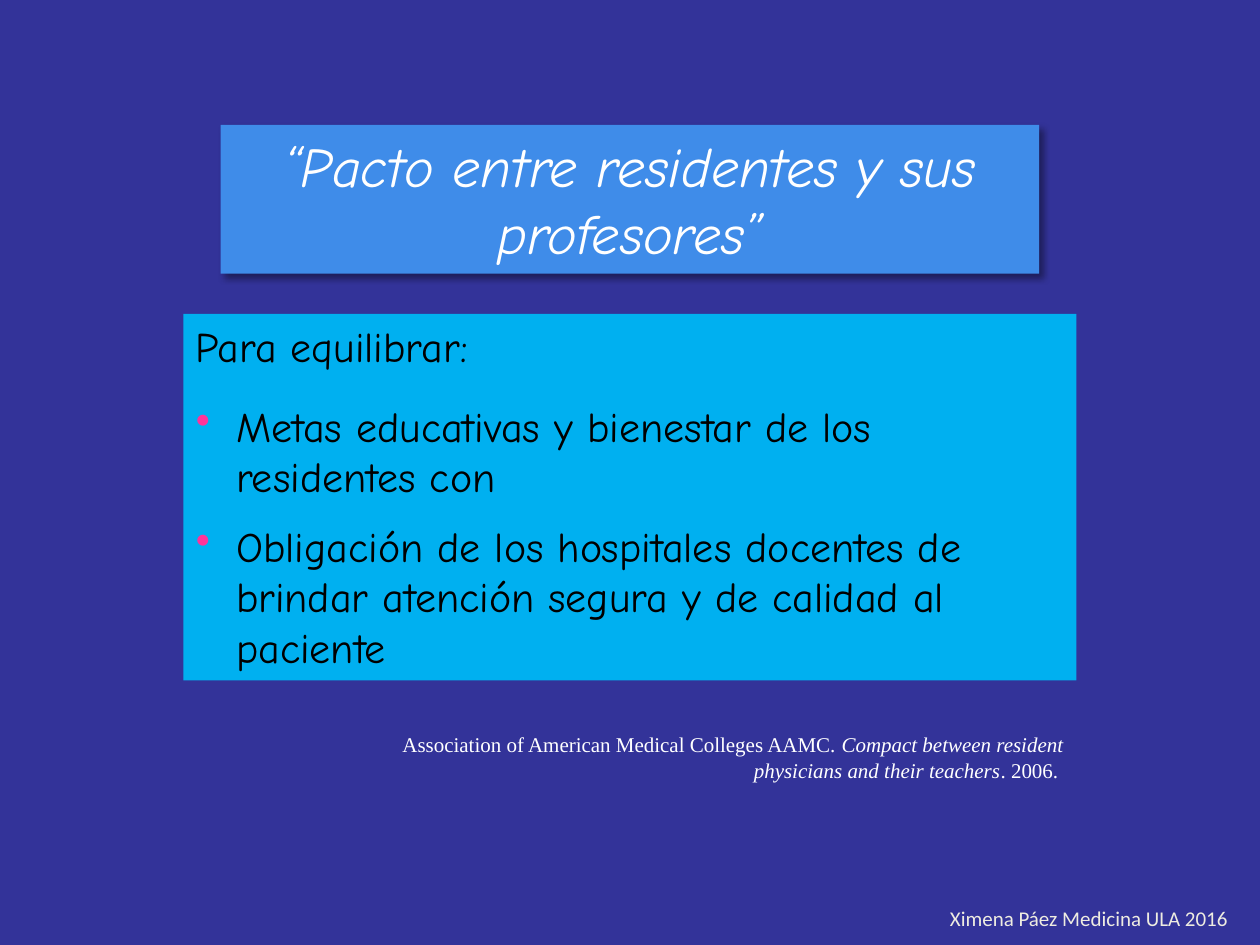
import pptx
import pptx.util
import pptx.dml.color
import pptx.enum.shapes
import pptx.enum.text
import pptx.oxml
import pptx.oxml.ns
from lxml import etree

Cm = pptx.util.Cm
Pt = pptx.util.Pt
Align = pptx.enum.text.PP_ALIGN

TITLE = "“Pacto entre residentes y sus profesores”"
INTRO = "Para equilibrar:"
GOALS = [
    ("Metas educativas y bienestar de los residentes con", 17),
    ("Obligación de los hospitales docentes de brindar atención segura y de calidad al paciente", 11),
]
CITATION = [
    ("Association of American Medical Colleges AAMC. ", False),
    ("Compact between resident physicians and their teachers", True),
    (". 2006. ", False),
]
AUTHOR = "Ximena Páez Medicina ULA 2016"
HANGING = Cm(0.81)


def color(value):
    return pptx.dml.color.RGBColor.from_string(value)


def style(font, name, size, shade, italic=False):
    font.name = name
    font.size = Pt(size)
    font.color.rgb = color(shade)
    font.italic = italic


def add_panel(page, place, fill):
    panel = page.shapes.add_shape(
        pptx.enum.shapes.MSO_SHAPE.RECTANGLE, *map(Cm, place))
    panel.shadow.inherit = False
    panel.fill.solid()
    panel.fill.fore_color.rgb = color(fill)
    panel.line.fill.background()
    panel.text_frame.word_wrap = True
    panel.text_frame.vertical_anchor = pptx.enum.text.MSO_ANCHOR.TOP
    return panel


def add_shadow(shape):
    effects = shape._element.spPr.find(pptx.oxml.ns.qn("a:effectLst"))
    effects.append(pptx.oxml.parse_xml(
        f'<a:outerShdw {pptx.oxml.ns.nsdecls("a")} blurRad="{Pt(4)}" dist="{Pt(3)}" '
        'dir="2700000" algn="tl" rotWithShape="0">'
        '<a:srgbClr val="000000"><a:alpha val="40000"/></a:srgbClr></a:outerShdw>'))


def add_bullet(para, shade):
    properties = para._p.get_or_add_pPr()
    properties.set("marL", str(HANGING))
    properties.set("indent", str(-HANGING))
    bullet_color = etree.SubElement(properties, pptx.oxml.ns.qn("a:buClr"))
    etree.SubElement(bullet_color, pptx.oxml.ns.qn("a:srgbClr"), val=shade)
    etree.SubElement(properties, pptx.oxml.ns.qn("a:buChar"), char="•")


def main():
    deck = pptx.Presentation()
    deck.slide_width, deck.slide_height = Cm(25.4), Cm(19.05)
    page = deck.slides.add_slide(deck.slide_layouts[6])
    page.background.fill.solid()
    page.background.fill.fore_color.rgb = color("333399")

    title = add_panel(page, (4.45, 2.52, 16.5, 3), "3F8CE9")
    add_shadow(title)
    title.text_frame.text = TITLE
    para = title.text_frame.paragraphs[0]
    para.alignment = Align.CENTER
    style(para.runs[0].font, "Comic Neue", 32, "FFFFFF", True)

    pact = add_panel(page, (3.7, 6.33, 18, 7.39), "00B0F0")
    frame = pact.text_frame
    frame.text = INTRO
    for goal, gap in GOALS:
        para = frame.add_paragraph()
        para.text = goal
        para.space_before = Pt(gap)
        add_bullet(para, "FF3399")
    for para in frame.paragraphs:
        para.alignment = Align.LEFT
        style(para.runs[0].font, "Comic Neue", 24, "000000")

    source = page.shapes.add_textbox(Cm(7.82), Cm(14.63), Cm(13.87), Cm(1.28))
    source.text_frame.word_wrap = True
    para = source.text_frame.paragraphs[0]
    para.alignment = Align.RIGHT
    for text, italic in CITATION:
        span = para.add_run()
        span.text = text
        style(span.font, "Times New Roman", 12, "FFFFFF", italic)

    author = page.shapes.add_textbox(Cm(18.9), Cm(18.13), Cm(6.4), Cm(0.77))
    author.text_frame.word_wrap = False
    author.text_frame.text = AUTHOR
    style(author.text_frame.paragraphs[0].runs[0].font, "Calibri", 12, "EEECE1")

    deck.save("out.pptx")


if __name__ == "__main__":
    main()
